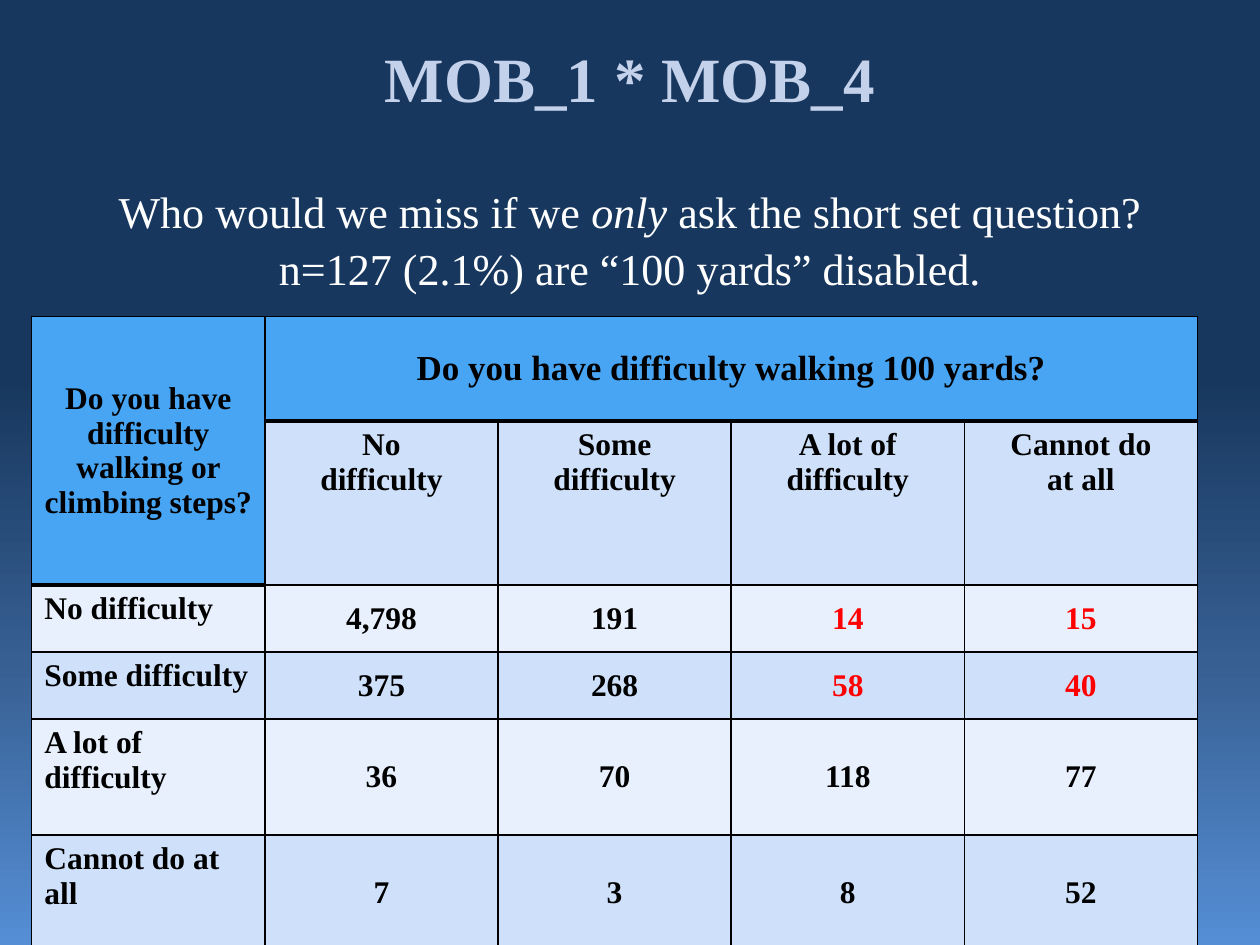
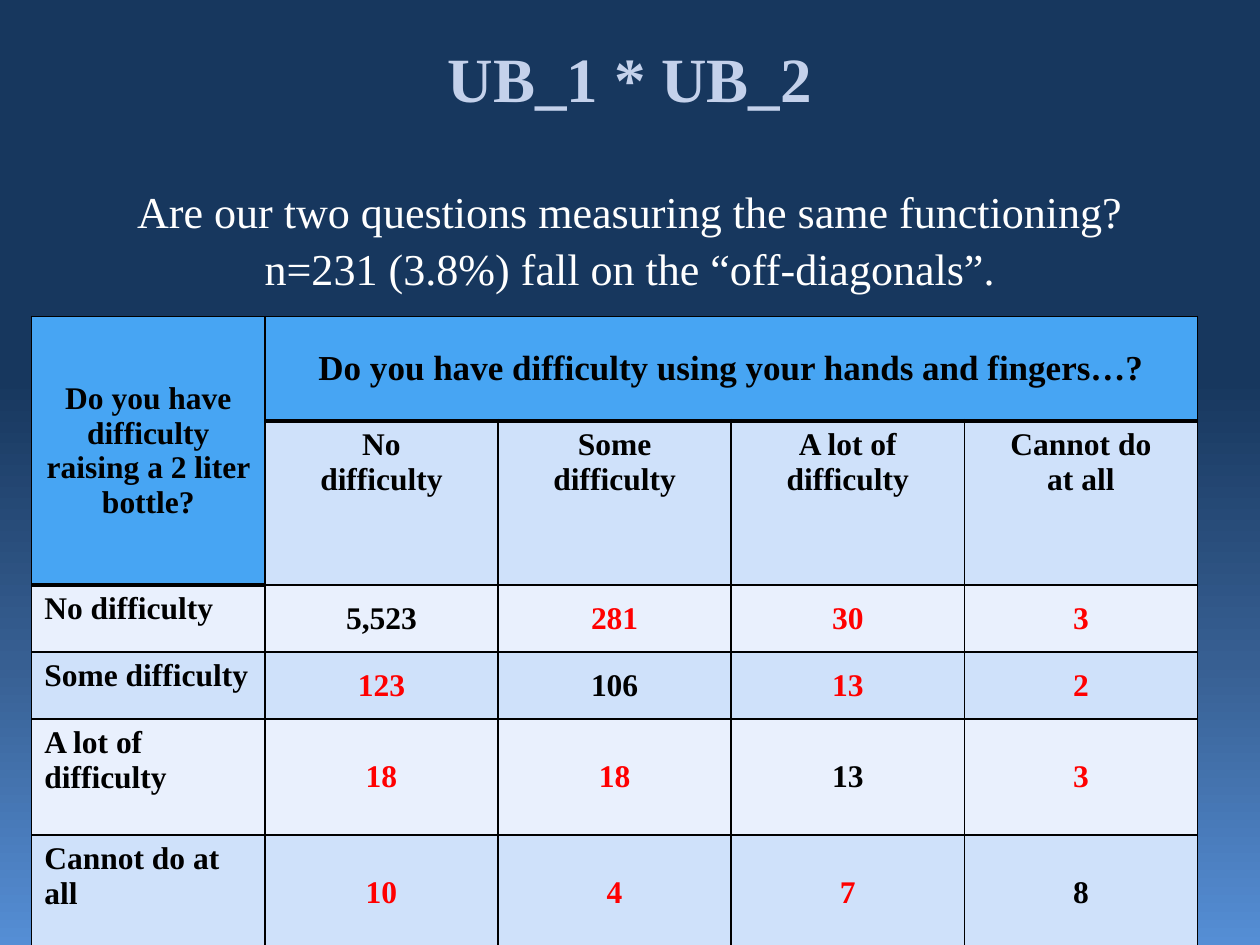
from lxml.etree import SubElement
from pptx import Presentation
from pptx.dml.color import RGBColor
from pptx.enum.text import MSO_ANCHOR, PP_ALIGN
from pptx.oxml.ns import qn
from pptx.util import Cm, Pt

FONT = "Times New Roman"
BLACK = RGBColor(0x00, 0x00, 0x00)
WHITE = RGBColor(0xFF, 0xFF, 0xFF)
RED = RGBColor(0xFF, 0x00, 0x00)
TITLE_BLUE = RGBColor(0xC4, 0xD1, 0xEB)
HEADER_BLUE = RGBColor(0x47, 0xA5, 0xF3)
BANDS = [RGBColor(0xE9, 0xF0, 0xFD), RGBColor(0xCF, 0xE1, 0xFA)]
NAVY = RGBColor(0x17, 0x37, 0x5E)
BACKGROUND_STOPS = [
    (0, NAVY),
    (40, NAVY),
    (70, RGBColor(0x37, 0x5F, 0x92)),
    (100, RGBColor(0x55, 0x8E, 0xD5)),
]

COLUMN_LABELS = ["No\vdifficulty", "Some\vdifficulty", "A lot of difficulty", "Cannot do\vat all"]
ROW_LABELS = ["No difficulty", "Some difficulty", "A lot of difficulty", "Cannot do at all"]

# Each subtitle line is a list of (text, italic) pieces.
CROSSTABS = [
    {
        "title": "MOB_1 * MOB_4",
        "subtitle": [
            [("Who would we miss if we ", False), ("only ", True),
             ("ask the short set question?", False)],
            [("n=127 (2.1%) are “100 yards” disabled.", False)],
        ],
        "row_question": "Do you have difficulty walking or climbing steps?",
        "column_question": "Do you have difficulty walking 100 yards?",
        "counts": [
            ["4,798", "191", "14", "15"],
            ["375", "268", "58", "40"],
            ["36", "70", "118", "77"],
            ["7", "3", "8", "52"],
        ],
        "is_red": lambda row, column: row < 2 <= column,
    },
    {
        "title": "UB_1 * UB_2",
        "subtitle": [
            [("Are our two questions measuring the same functioning?", False)],
            [("n=231 (3.8%) fall on the “off-diagonals”.", False)],
        ],
        "row_question": "Do you have difficulty raising a 2 liter bottle?",
        "column_question": "Do you have difficulty using your hands and fingers…?",
        "counts": [
            ["5,523", "281", "30", "3"],
            ["123", "106", "13", "2"],
            ["18", "18", "13", "3"],
            ["10", "4", "7", "8"],
        ],
        "is_red": lambda row, column: row != column,
    },
]

TEXT_LEFT, TEXT_WIDTH = Cm(1.27), Cm(22.86)
TABLE_LEFT, TABLE_TOP = Cm(0.64), Cm(6.38)
COLUMN_WIDTH = Cm(4.7)
ROW_HEIGHTS = [Cm(height) for height in (2.11, 2.11, 1.35, 1.35, 2.34, 2.34)]


def style_paragraph(paragraph, size, color, bold, alignment=PP_ALIGN.CENTER):
    paragraph.alignment = alignment
    font = paragraph.font
    font.name, font.size, font.bold = FONT, Pt(size), bold
    font.color.rgb = color


def set_background(master):
    master.background.fill.gradient()
    gradient = master.element.find(".//" + qn("a:gradFill"))
    for child in list(gradient):
        gradient.remove(child)
    stops = SubElement(gradient, qn("a:gsLst"))
    for percent, color in BACKGROUND_STOPS:
        stop = SubElement(stops, qn("a:gs"), pos=str(percent * 1000))
        SubElement(stop, qn("a:srgbClr"), val=str(color))
    SubElement(gradient, qn("a:lin"), ang=str(90 * 60000), scaled="0")


def add_text_frame(slide, top, height):
    box = slide.shapes.add_textbox(TEXT_LEFT, top, TEXT_WIDTH, height)
    frame = box.text_frame
    frame.word_wrap = True
    frame.margin_top = frame.margin_bottom = 0
    return frame


def add_heading(slide, title, subtitle):
    paragraph = add_text_frame(slide, Cm(0.79), Cm(1.45)).paragraphs[0]
    paragraph.text = title
    style_paragraph(paragraph, 36, TITLE_BLUE, True)

    frame = add_text_frame(slide, Cm(3.71), Cm(2.1))
    for index, pieces in enumerate(subtitle):
        paragraph = frame.add_paragraph() if index else frame.paragraphs[0]
        style_paragraph(paragraph, 25.2, WHITE, False)
        if index:
            paragraph.space_before = Pt(2.4)
        for text, italic in pieces:
            run = paragraph.add_run()
            run.text = text
            run.font.italic = italic


def is_header(row, column):
    return row == 0 or (row == 1 and column == 0)


def set_borders(cell, row, column):
    """Thin black lines, thick under the header cells."""
    widths = {
        "a:lnL": 1,
        "a:lnR": 1,
        "a:lnT": 3 if row and is_header(row - 1, column) else 1,
        "a:lnB": 3 if is_header(row, column) else 1,
    }
    properties = cell._tc.get_or_add_tcPr()
    for tag, width in widths.items():
        line = SubElement(properties, qn(tag), w=str(Pt(width)))
        fill = SubElement(line, qn("a:solidFill"))
        SubElement(fill, qn("a:srgbClr"), val=str(BLACK))


def fill_cell(cell, text, size=18, anchor=MSO_ANCHOR.MIDDLE, alignment=PP_ALIGN.CENTER):
    paragraph = cell.text_frame.paragraphs[0]
    paragraph.text = text
    style_paragraph(paragraph, size, BLACK, True, alignment)
    cell.vertical_anchor = anchor
    return paragraph


def add_crosstab(slide, crosstab):
    row_count, column_count = len(ROW_HEIGHTS), len(COLUMN_LABELS) + 1
    table = slide.shapes.add_table(
        row_count, column_count, TABLE_LEFT, TABLE_TOP,
        COLUMN_WIDTH * column_count, sum(ROW_HEIGHTS)).table
    table.first_row = table.horz_banding = False
    for column in table.columns:
        column.width = COLUMN_WIDTH
    for row, height in zip(table.rows, ROW_HEIGHTS):
        row.height = height

    for row in range(row_count):
        for column in range(column_count):
            cell = table.cell(row, column)
            set_borders(cell, row, column)
            cell.fill.solid()
            cell.fill.fore_color.rgb = HEADER_BLUE if is_header(row, column) else BANDS[row % 2]

    table.cell(0, 0).merge(table.cell(1, 0))
    table.cell(0, 1).merge(table.cell(0, column_count - 1))
    fill_cell(table.cell(0, 0), crosstab["row_question"])
    fill_cell(table.cell(0, 1), crosstab["column_question"], size=20)
    for column, label in enumerate(COLUMN_LABELS, start=1):
        fill_cell(table.cell(1, column), label, anchor=MSO_ANCHOR.TOP)
    for row, (label, counts) in enumerate(zip(ROW_LABELS, crosstab["counts"])):
        fill_cell(table.cell(row + 2, 0), label, anchor=MSO_ANCHOR.TOP, alignment=PP_ALIGN.LEFT)
        for column, count in enumerate(counts):
            paragraph = fill_cell(table.cell(row + 2, column + 1), count)
            if crosstab["is_red"](row, column):
                paragraph.runs[0].font.color.rgb = RED


def main():
    presentation = Presentation()
    presentation.slide_width, presentation.slide_height = Cm(25.4), Cm(19.05)
    set_background(presentation.slide_master)
    for crosstab in CROSSTABS:
        slide = presentation.slides.add_slide(presentation.slide_layouts[6])
        add_heading(slide, crosstab["title"], crosstab["subtitle"])
        add_crosstab(slide, crosstab)
    presentation.save("out.pptx")


if __name__ == "__main__":
    main()
